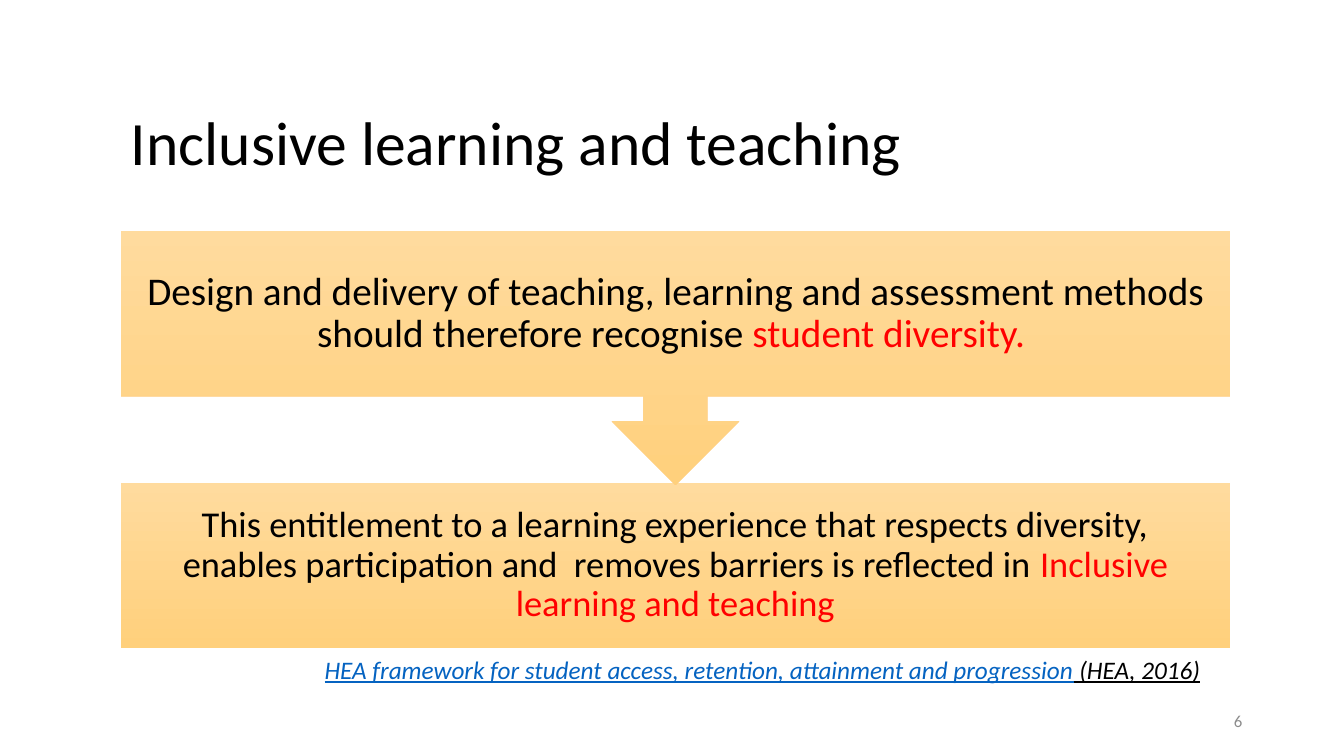
import pptx
import pptx.util
import pptx.dml.color
import pptx.enum.shapes
import pptx.enum.text

SHAPE = pptx.enum.shapes.MSO_SHAPE
ALIGN = pptx.enum.text.PP_ALIGN
ANCHOR = pptx.enum.text.MSO_ANCHOR

# Content: runs are (text, colour name)
TITLE = [("Inclusive learning and teaching", "text")]
DESIGN = [
    ("Design and delivery of teaching, learning and assessment methods "
     "should therefore recognise ", "text"),
    ("student diversity. ", "accent"),
]
ENTITLEMENT = [
    ("This entitlement to a learning experience that respects diversity, "
     "enables participation and  removes barriers is reflected in ", "text"),
    ("Inclusive learning and teaching", "accent"),
]
SOURCE = [
    ("HEA framework for student access, retention, attainment and progression", "link"),
    (" (HEA, 2016)", "text"),
]
NUMBER = [("6", "muted")]

THEME = {
    "font": "Calibri",
    "colors": {"text": "000000", "accent": "FF0000", "link": "0563C1", "muted": "8C8C8C"},
    "gradient": ("FFDB9E", "FFD07C"),
    "sizes": {"title": 44, "design": 28, "entitlement": 26, "source": 18, "number": 12},
}

# Layout: 100 px to the inch
PX = 9144
LEFT, WIDTH = 120, 1100
BOX_H = 164
CALLOUT_TOP, CALLOUT_H = 229, 252
BOX_TOP = 479


def px(*lengths):
    return [pptx.util.Emu(n * PX) for n in lengths]


def rgb(value):
    return pptx.dml.color.RGBColor.from_string(value)


def write(sp, runs, size, align=ALIGN.LEFT, anchor=ANCHOR.MIDDLE,
          insets=(10, 5, 10, 5), spacing=1.0):
    tf = sp.text_frame
    tf.word_wrap = True
    tf.vertical_anchor = anchor
    tf.margin_left, tf.margin_top, tf.margin_right, tf.margin_bottom = px(*insets)
    p = tf.paragraphs[0]
    p.alignment = align
    p.line_spacing = spacing
    p.font.name = THEME["font"]
    p.font.size = pptx.util.Pt(THEME["sizes"][size])
    for text, color in runs:
        r = p.add_run()
        r.text = text
        r.font.color.rgb = rgb(THEME["colors"][color])
    return p


def add_text(s, box, runs, size, **options):
    return write(s.shapes.add_textbox(*px(*box)), runs, size, **options)


def add_panel(s, kind, top, height, runs, size, inset):
    sp = s.shapes.add_shape(kind, *px(LEFT, top, WIDTH, height))
    sp.shadow.inherit = False
    sp.line.fill.background()
    sp.fill.gradient()
    sp.fill.gradient_angle = 270
    for stop, color in zip(sp.fill.gradient_stops, THEME["gradient"]):
        stop.color.rgb = rgb(color)
    write(sp, runs, size, align=ALIGN.CENTER, insets=[inset] * 4, spacing=0.9)
    return sp


def main():
    prs = pptx.Presentation()
    prs.slide_width, prs.slide_height = px(1333, 750)
    s = prs.slides.add_slide(prs.slide_layouts[6])

    # Title
    add_text(s, (LEFT, 31, WIDTH, 159), TITLE, "title", anchor=ANCHOR.BOTTOM,
             insets=(10, 5, 10, 13), spacing=0.9)

    # Two panels, the upper one pointing at the lower
    add_panel(s, SHAPE.RECTANGLE, BOX_TOP, BOX_H, ENTITLEMENT, "entitlement", 20)
    callout = add_panel(s, SHAPE.DOWN_ARROW_CALLOUT, CALLOUT_TOP, CALLOUT_H,
                        DESIGN, "design", 22)
    callout.adjustments[3] = BOX_H / CALLOUT_H

    # Slide number and reference
    add_text(s, (942, 695, 300, 40), NUMBER, "number", align=ALIGN.RIGHT)
    p = add_text(s, (312, 644, 918, 40), SOURCE, "source", anchor=ANCHOR.TOP)
    p.font.italic = True
    p.font.underline = True

    prs.save("out.pptx")


if __name__ == "__main__":
    main()
